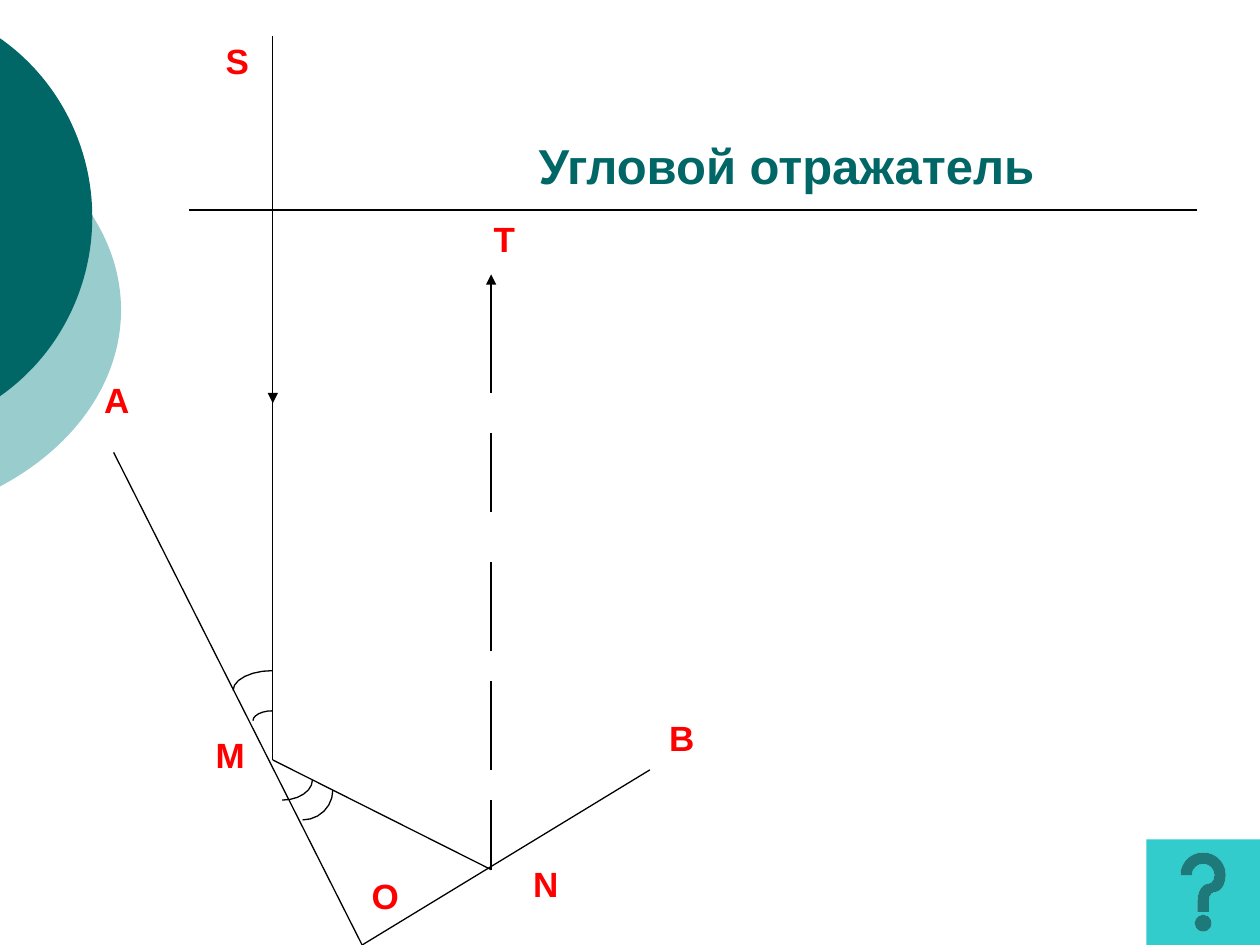
from math import cos, pi, sin

from lxml.etree import SubElement
from pptx import Presentation
from pptx.dml.color import RGBColor
from pptx.enum.shapes import MSO_CONNECTOR as Connector, MSO_SHAPE as Shape
from pptx.enum.text import MSO_ANCHOR as Anchor, MSO_AUTO_SIZE as AutoSize
from pptx.oxml.ns import qn
from pptx.util import Cm, Pt

BLACK, TEAL, PALE_TEAL, CYAN, RED = "000000", "006666", "99CCCC", "33CCCC", "FF0000"

POINT_A, POINT_O, POINT_B = (2.29, 9.12), (7.3, 19.05), (13.1, 15.52)
POINT_M, POINT_N = (5.5, 15.32), (9.9, 17.53)

# Center x, center y, radius x, radius y
REFLECTED_ANGLE_ARCS = [(5.69, 15.72, 0.61, 0.41), (6.1, 15.93, 0.61, 0.6)]
INCIDENT_ANGLE_ARCS = [(5.5, 14.53, 0.4, 0.2), (5.5, 13.92, 0.8, 0.4)]

RETURN_RAY_DASHES = [(17.53, 16.13), (15.52, 13.72), (13.13, 11.33), (10.32, 8.73)]

LABELS = [
    ("T", 9.7, 4.27, 0.94), ("A", 1.85, 7.51, 1.02), ("M", 4.1, 14.66, 1.09),
    ("O", 7.24, 17.5, 1.07), ("N", 10.5, 17.26, 1.02), ("B", 13.24, 14.31, 1.02),
    ("S", 4.3, 0.67, 0.99),
]


def color(value):
    return RGBColor.from_string(value)


def add_line(slide, start, end, width=0.75, arrow=False):
    line = slide.shapes.add_connector(
        Connector.STRAIGHT, *(Cm(value) for value in (*start, *end)))
    line.line.color.rgb = color(BLACK)
    line.line.width = Pt(width)
    if arrow:
        SubElement(line.get_or_add_ln(), qn("a:tailEnd"), type="triangle")
    SubElement(line._element.spPr, qn("a:effectLst"))


def add_filled_shape(slide, kind, left, top, width, height, fill):
    shape = slide.shapes.add_shape(kind, Cm(left), Cm(top), Cm(width), Cm(height))
    shape.shadow.inherit = False
    shape.fill.solid()
    shape.fill.fore_color.rgb = color(fill)
    shape.line.fill.background()


def add_angle_arc(slide, ellipse, start, steps=6):
    """Draw a quarter of an ellipse, clockwise from the start angle."""
    center_x, center_y, radius_x, radius_y = ellipse
    angles = [start + pi / 2 * step / steps for step in range(steps + 1)]
    points = [(Cm(center_x + radius_x * cos(angle)), Cm(center_y + radius_y * sin(angle)))
              for angle in angles]
    builder = slide.shapes.build_freeform(*points[0])
    builder.add_line_segments(points[1:], close=False)
    arc = builder.convert_to_shape()
    arc.shadow.inherit = False
    arc.fill.background()
    arc.line.color.rgb = color(BLACK)
    arc.line.width = Pt(0.75)


def add_text(slide, text, left, top, width, height, size, text_color):
    box = slide.shapes.add_textbox(Cm(left), Cm(top), Cm(width), Cm(height))
    run = box.text_frame.paragraphs[0].add_run()
    run.text = text
    run.font.name = "Arial"
    run.font.size = Pt(size)
    run.font.bold = True
    run.font.color.rgb = color(text_color)
    return box.text_frame


def add_title(slide, text):
    frame = add_text(slide, text, 3.89, 0.91, 20.32, 3.18, 28, TEAL)
    frame.word_wrap = True
    frame.vertical_anchor = Anchor.BOTTOM
    frame.margin_left = Cm(6.97)
    frame.margin_bottom = Cm(0.17)


def add_label(slide, text, left, top, width):
    frame = add_text(slide, text, left, top, width, 1.09, 20, RED)
    frame.word_wrap = False
    frame.auto_size = AutoSize.SHAPE_TO_FIT_TEXT


def add_rays(slide):
    ray_x, return_x = POINT_M[0], POINT_N[0]
    add_line(slide, (ray_x, 0.72), (ray_x, 8.13), arrow=True)
    add_line(slide, (ray_x, 7.72), POINT_M)
    add_line(slide, POINT_M, POINT_N)
    for start, end in RETURN_RAY_DASHES:
        add_line(slide, (return_x, start), (return_x, end))
    add_line(slide, (return_x, 7.92), (return_x, 5.53), arrow=True)


def main():
    presentation = Presentation()
    presentation.slide_width, presentation.slide_height = Cm(25.4), Cm(19.05)
    slide = presentation.slides.add_slide(presentation.slide_layouts[6])

    add_filled_shape(slide, Shape.OVAL, -8.99, 1.91, 11.43, 8.68, PALE_TEAL)
    add_filled_shape(slide, Shape.OVAL, -6.73, 0, 8.59, 8.76, TEAL)
    add_line(slide, (3.81, 4.24), (24.13, 4.24), width=1)
    add_title(slide, "Угловой отражатель")

    add_line(slide, POINT_A, POINT_O)
    add_line(slide, POINT_O, POINT_B)
    add_rays(slide)
    for ellipse in REFLECTED_ANGLE_ARCS:
        add_angle_arc(slide, ellipse, 0)
    for ellipse in INCIDENT_ANGLE_ARCS:
        add_angle_arc(slide, ellipse, pi)
    for label in LABELS:
        add_label(slide, *label)
    add_filled_shape(slide, Shape.ACTION_BUTTON_HELP, 23.11, 16.92, 2.29, 2.13, CYAN)

    presentation.save("out.pptx")


if __name__ == "__main__":
    main()
